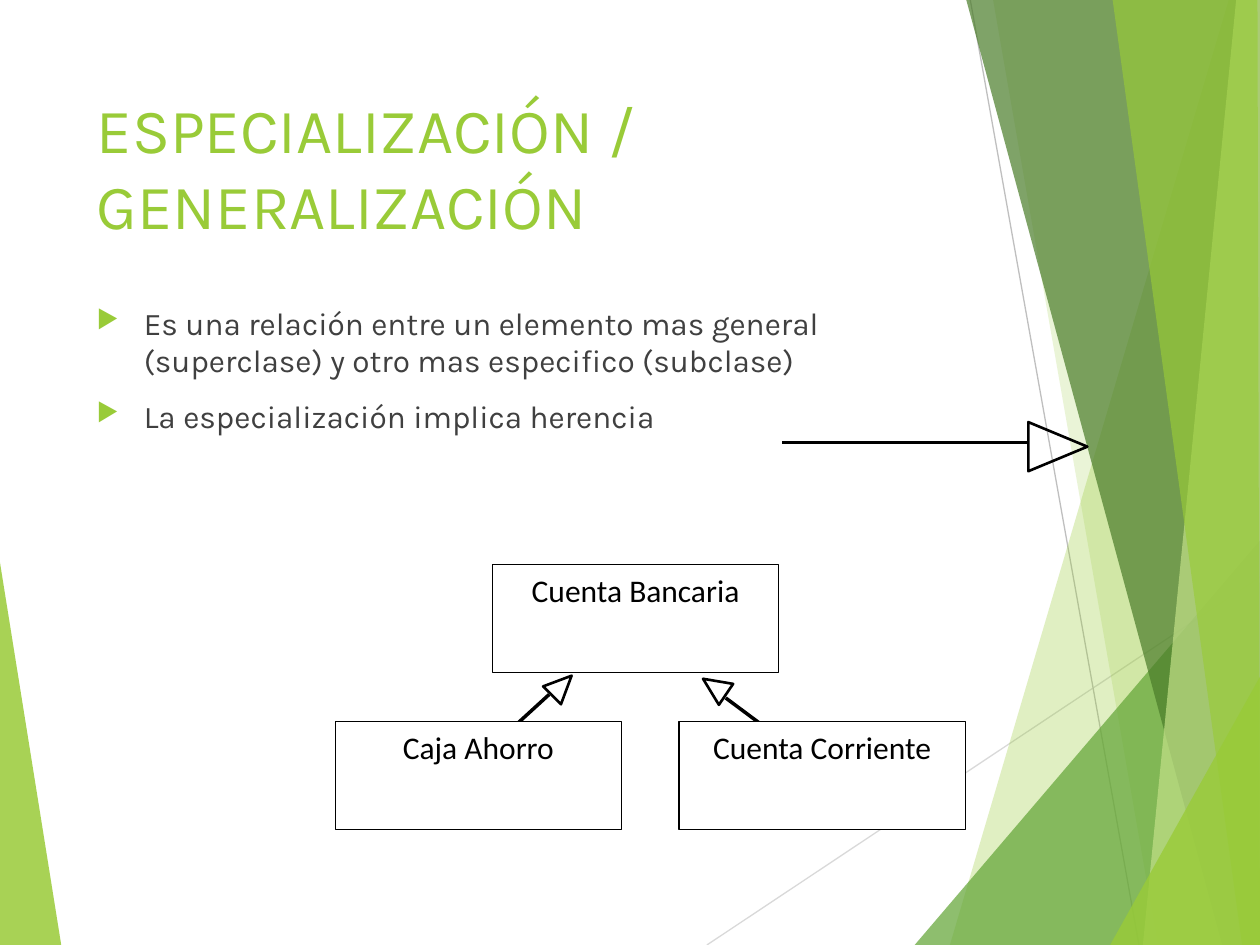
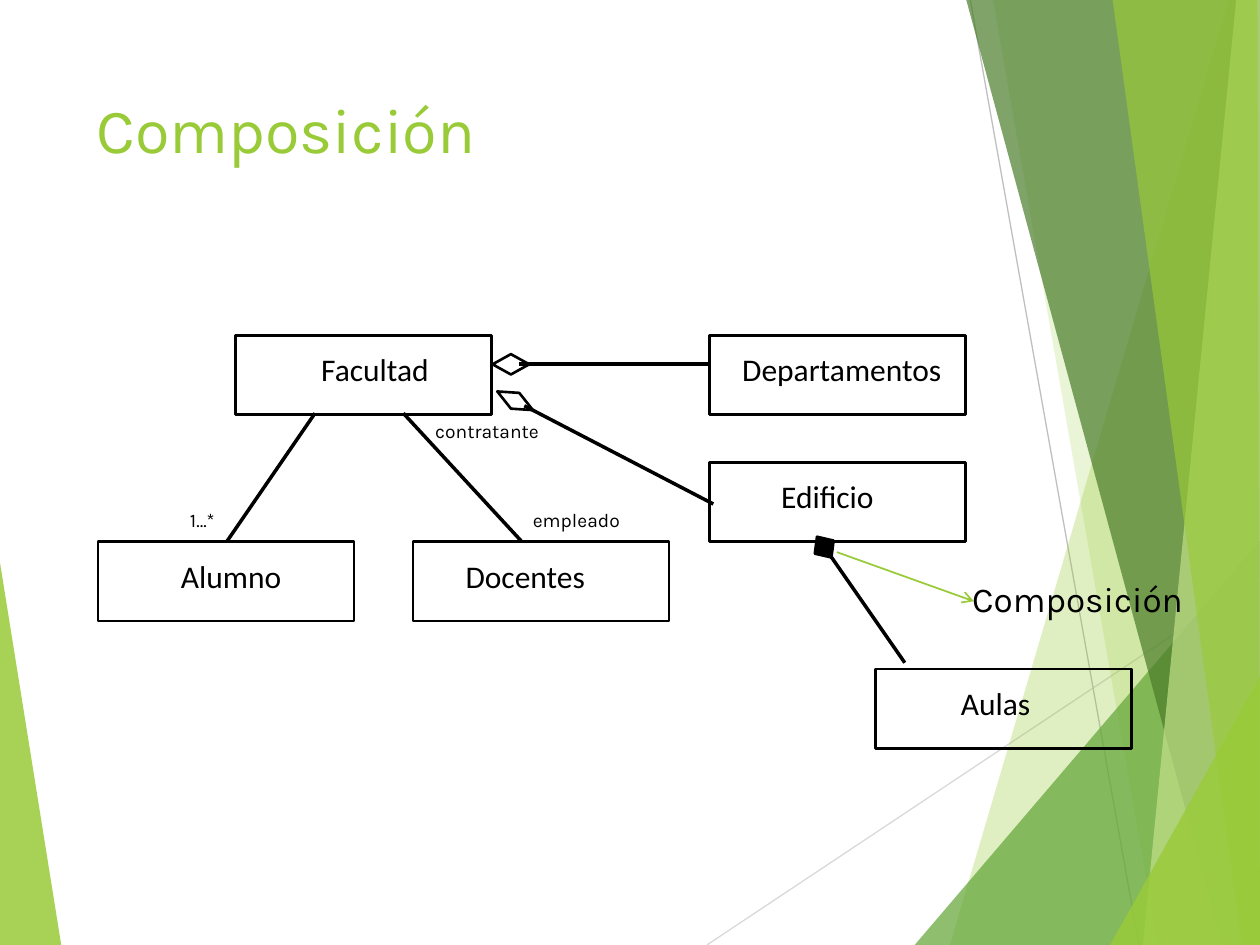
from dataclasses import dataclass

from lxml import etree
from pptx import Presentation
from pptx.dml.color import RGBColor
from pptx.enum.shapes import MSO_CONNECTOR, MSO_SHAPE
from pptx.enum.text import MSO_ANCHOR, MSO_AUTO_SIZE, PP_ALIGN
from pptx.oxml.ns import qn
from pptx.util import Cm, Pt

RECTANGLE = MSO_SHAPE.RECTANGLE
TRIANGLE = MSO_SHAPE.ISOSCELES_TRIANGLE
DIAMOND = MSO_SHAPE.DIAMOND
STRAIGHT = MSO_CONNECTOR.STRAIGHT
LEFT, CENTER = PP_ALIGN.LEFT, PP_ALIGN.CENTER
TOP = MSO_ANCHOR.TOP
NO_AUTOFIT = MSO_AUTO_SIZE.NONE
TITLE_ONLY = 5


@dataclass(frozen=True)
class Theme:
    lime: str = "99CB38"
    green: str = "63A537"
    dark_green: str = "4A7C29"
    pale_lime: str = "C2E088"
    text: str = "404040"
    black: str = "000000"
    white: str = "FFFFFF"
    light_gray: str = "D9D9D9"
    mid_gray: str = "BFBFBF"
    heading_font: str = "Karla"
    diagram_font: str = "Calibri"
    title_size: int = 36
    callout_size: int = 20
    body_size: int = 18
    role_size: int = 11
    thin: float = 0.75
    arrow: float = 1
    outline: float = 1.5
    relation: float = 2


THEME = Theme()

# All coordinates are in centimetres.
WIDTH, HEIGHT = 25.4, 19.05
EDGE = 25.43
INSET = 0.25
ACCOUNT_SIZE = (5.77, 2.18)
ENTITY_SIZE = (5.16, 1.6)
ROLE_SIZE = (3.38, 0.79)

# Facets of the backdrop: colour, opacity in percent, corners.
FACETS = [
    (THEME.lime, 85, [(-0.03, 11.15), (1.24, 19.08), (-0.03, HEIGHT)]),
    (THEME.lime, 30, [(24.77, 0), (19.15, HEIGHT), (EDGE, HEIGHT), (EDGE, 0)]),
    (THEME.lime, 20, [(20.02, 0), (23.34, HEIGHT), (EDGE, HEIGHT), (EDGE, 0)]),
    (THEME.green, 72, [(18.44, HEIGHT), (25.4, 10.9), (EDGE, HEIGHT)]),
    (THEME.dark_green, 70, [(19.48, 0), (24.64, HEIGHT), (EDGE, HEIGHT), (EDGE, 0)]),
    (THEME.pale_lime, 70, [(24.92, 0), (23.04, HEIGHT), (EDGE, HEIGHT), (25.4, 0)]),
    (THEME.lime, 65, [(22.43, 0), (25.04, HEIGHT), (25.4, HEIGHT), (25.35, 0)]),
    (THEME.lime, 80, [(22.38, HEIGHT), (EDGE, 13.59), (EDGE, HEIGHT)]),
]
BACKDROP_LINES = [
    ((14.25, HEIGHT), (EDGE, 11.61), THEME.light_gray),
    ((19.56, 0), (22.96, HEIGHT), THEME.mid_gray),
]


def rgb(color):
    return RGBColor.from_string(color)


def write_text(paragraph, text, *, size, font=THEME.heading_font,
               color=THEME.black, align=CENTER, before=0, after=0):
    paragraph.alignment = align
    paragraph.space_before = Pt(before)
    paragraph.space_after = Pt(after)
    run = paragraph.add_run()
    run.text = text
    run.font.name = font
    run.font.size = Pt(size)
    run.font.color.rgb = rgb(color)


def prepare_frame(shape, left=INSET, right=INSET, top=0.13):
    frame = shape.text_frame
    frame.word_wrap = True
    frame.auto_size = NO_AUTOFIT
    frame.vertical_anchor = TOP
    frame.margin_left, frame.margin_right, frame.margin_top = Cm(left), Cm(right), Cm(top)
    return frame


def add_line(slide, start, end, color=THEME.black, width=THEME.relation, arrow=False):
    line = slide.shapes.add_connector(STRAIGHT, *map(Cm, start + end))
    line.line.color.rgb = rgb(color)
    line.line.width = Pt(width)
    properties = line.element.spPr
    if arrow:
        etree.SubElement(properties.find(qn("a:ln")), qn("a:tailEnd"), type="arrow")
    etree.SubElement(properties, qn("a:effectLst"))
    return line


def add_preset(slide, kind, position, size, fill=None, width=THEME.outline, rotation=0):
    shape = slide.shapes.add_shape(kind, *map(Cm, position + size))
    shape.shadow.inherit = False
    shape.rotation = rotation
    shape.line.color.rgb = rgb(THEME.black)
    shape.line.width = Pt(width)
    if fill:
        shape.fill.solid()
        shape.fill.fore_color.rgb = rgb(fill)
    else:
        shape.fill.background()
    return shape


def add_facet(slide, color, opacity, corners):
    start, *others = [(Cm(x), Cm(y)) for x, y in corners]
    builder = slide.shapes.build_freeform(*start)
    builder.add_line_segments(others, close=True)
    facet = builder.convert_to_shape()
    facet.shadow.inherit = False
    facet.line.fill.background()
    facet.fill.solid()
    facet.fill.fore_color.rgb = rgb(color)
    color_element = next(facet.element.spPr.iter(qn("a:srgbClr")))
    etree.SubElement(color_element, qn("a:alpha"), val=str(opacity * 1000))
    return facet


def add_backdrop(slide):
    """Build the facets on the slide, then move them to its layout to be shared."""
    left_facet, *right_facets = FACETS
    parts = [add_facet(slide, *left_facet)]
    parts += [add_line(slide, start, end, color, THEME.thin)
              for start, end, color in BACKDROP_LINES]
    parts += [add_facet(slide, *facet) for facet in right_facets]
    for number, part in enumerate(parts, start=100):
        next(part.element.iter(qn("p:cNvPr"))).set("id", str(number))
        slide.slide_layout.shapes.element.append(part.element)


def add_titled_slide(presentation, title):
    slide = presentation.slides.add_slide(presentation.slide_layouts[TITLE_ONLY])
    placeholder = slide.shapes.title
    placeholder.left, placeholder.top = Cm(1.7), Cm(1.7)
    placeholder.width, placeholder.height = Cm(17.63), Cm(3.66)
    write_text(prepare_frame(placeholder).paragraphs[0], title,
               size=THEME.title_size, color=THEME.lime, align=LEFT)
    return slide


def add_bullet(paragraph):
    properties = paragraph._p.get_or_add_pPr()
    properties.set("marL", str(Cm(0.95)))
    properties.set("indent", str(Cm(-0.95)))
    color = etree.SubElement(properties, qn("a:buClr"))
    etree.SubElement(color, qn("a:srgbClr"), val=THEME.lime)
    etree.SubElement(properties, qn("a:buSzPct"), val="80000")
    etree.SubElement(properties, qn("a:buChar"), char="▶")


def add_bullet_list(slide, position, size, items):
    frame = prepare_frame(slide.shapes.add_textbox(*map(Cm, position + size)))
    for index, item in enumerate(items):
        paragraph = frame.add_paragraph() if index else frame.paragraphs[0]
        write_text(paragraph, item, size=THEME.body_size, color=THEME.text,
                   align=LEFT, before=10)
        add_bullet(paragraph)


def add_label(slide, text, position, size=ROLE_SIZE, text_size=THEME.role_size):
    box = slide.shapes.add_textbox(*map(Cm, position + size))
    write_text(prepare_frame(box).paragraphs[0], text, size=text_size,
               before=0.2 * text_size)


def add_account(slide, name, position):
    box = add_preset(slide, RECTANGLE, position, ACCOUNT_SIZE, THEME.white, THEME.thin)
    write_text(prepare_frame(box).paragraphs[0], name, size=THEME.body_size,
               font=THEME.diagram_font, after=10)


def add_entity(slide, name, position, shift):
    """Add a class box whose name sits shift centimetres right of the centre."""
    box = add_preset(slide, RECTANGLE, position, ENTITY_SIZE)
    frame = prepare_frame(box, left=INSET + max(0, 2 * shift),
                          right=INSET + max(0, -2 * shift), top=0.3)
    write_text(frame.paragraphs[0], name, size=THEME.body_size,
               font=THEME.diagram_font, after=10)


def add_relation(slide, start, end, head, position, size, rotation=0, fill=None):
    """Add a line with a UML head: a triangle for inheritance, a diamond for a whole."""
    add_line(slide, start, end)
    add_preset(slide, head, position, size, fill, rotation=rotation)


def build_specialization(slide):
    add_bullet_list(slide, (1.7, 5.99), (17.63, 10.77), [
        "Es una relación entre un elemento mas general (superclase) y otro "
        "mas especifico (subclase)",
        "La especialización implica herencia",
    ])
    add_relation(slide, (15.77, 8.92), (20.73, 8.92),
                 TRIANGLE, (20.83, 8.41), (0.99, 1.19), 90)
    head_size = (0.51, 0.56)
    add_relation(slide, (9.32, 15.6), (11.07, 14), TRIANGLE, (11.07, 13.54), head_size, 44.9)
    add_relation(slide, (16.51, 15.47), (14.63, 14.07),
                 TRIANGLE, (14.15, 13.56), head_size, 304.2)
    add_account(slide, "Cuenta Bancaria", (9.93, 11.38))
    add_account(slide, "Caja Ahorro", (6.76, 14.55))
    add_account(slide, "Cuenta Corriente", (13.69, 14.55))


def build_composition(slide):
    for name, position, shift in [
        ("Facultad", (4.75, 6.76), 0.23),
        ("Departamentos", (14.3, 6.76), 0.09),
        ("Alumno", (1.98, 10.92), 0.1),
        ("Docentes", (8.33, 10.92), -0.32),
        ("Edificio", (14.3, 9.32), -0.2),
        ("Aulas", (17.65, 13.49), -0.16),
    ]:
        add_entity(slide, name, position, shift)

    add_line(slide, (6.35, 8.33), (4.57, 10.92))
    add_line(slide, (8.13, 8.33), (10.52, 10.92))
    add_label(slide, "empleado", (9.93, 10.11))
    add_label(slide, "contratante", (8.13, 8.33))
    add_label(slide, "1…*", (2.39, 10.11))

    add_relation(slide, (10.46, 7.34), (14.3, 7.34), DIAMOND, (9.93, 7.14), (0.74, 0.41))
    add_line(slide, (16.87, 11.13), (19.63, 12.12), THEME.lime, THEME.arrow, arrow=True)
    add_relation(slide, (10.57, 8.18), (14.38, 10.16),
                 DIAMOND, (9.98, 7.9), (0.81, 0.36), 27.7)
    add_relation(slide, (16.69, 11.13), (18.24, 13.36),
                 DIAMOND, (16.36, 10.8), (0.51, 0.46), 55.1, THEME.black)
    add_label(slide, "Composición", (19.25, 11.51), (4.95, 1.19), THEME.callout_size)


def main():
    presentation = Presentation()
    presentation.slide_width, presentation.slide_height = Cm(WIDTH), Cm(HEIGHT)
    specialization = add_titled_slide(presentation, "ESPECIALIZACIÓN / GENERALIZACIÓN")
    add_backdrop(specialization)
    build_specialization(specialization)
    build_composition(add_titled_slide(presentation, "Composición"))
    presentation.save("out.pptx")


if __name__ == "__main__":
    main()
